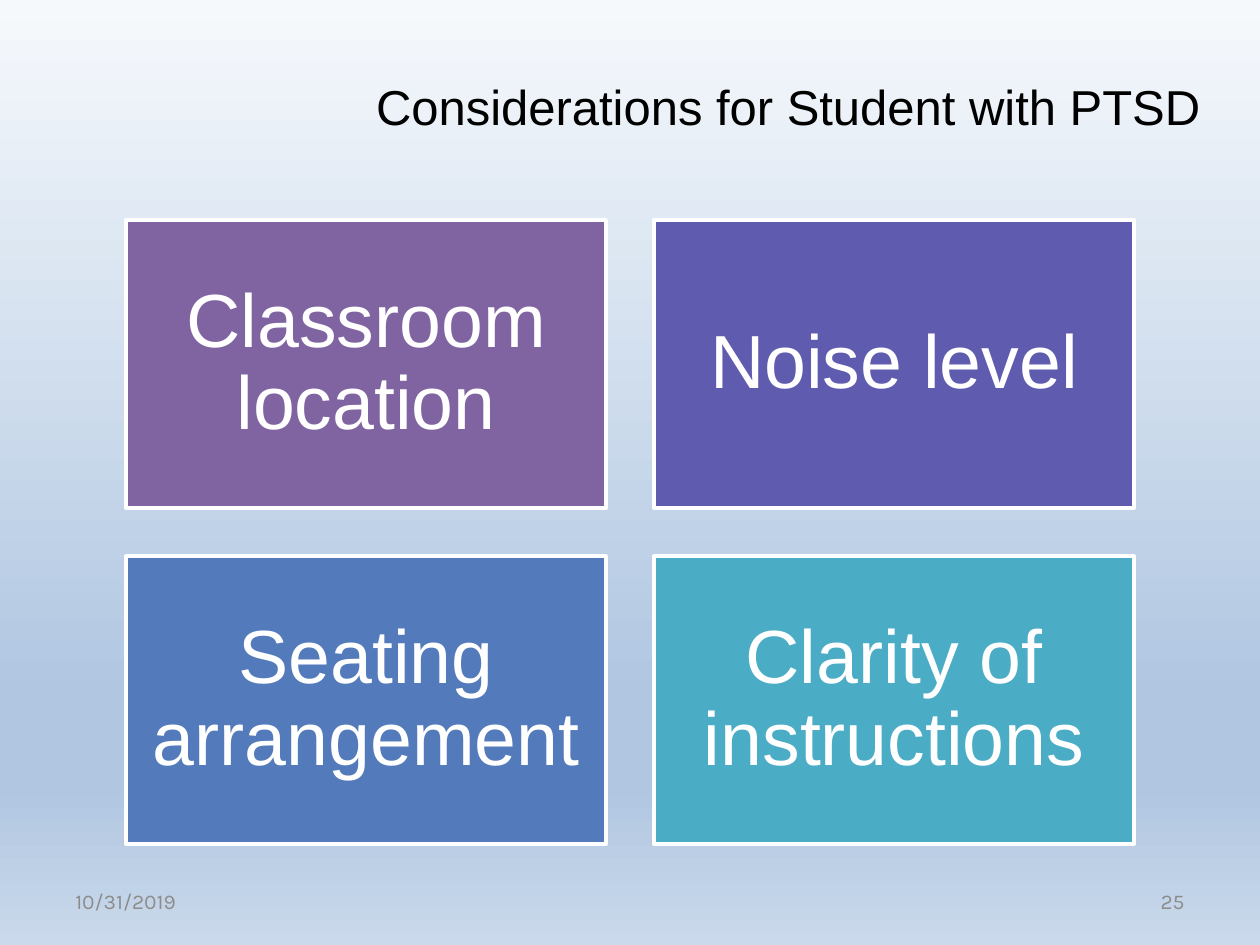
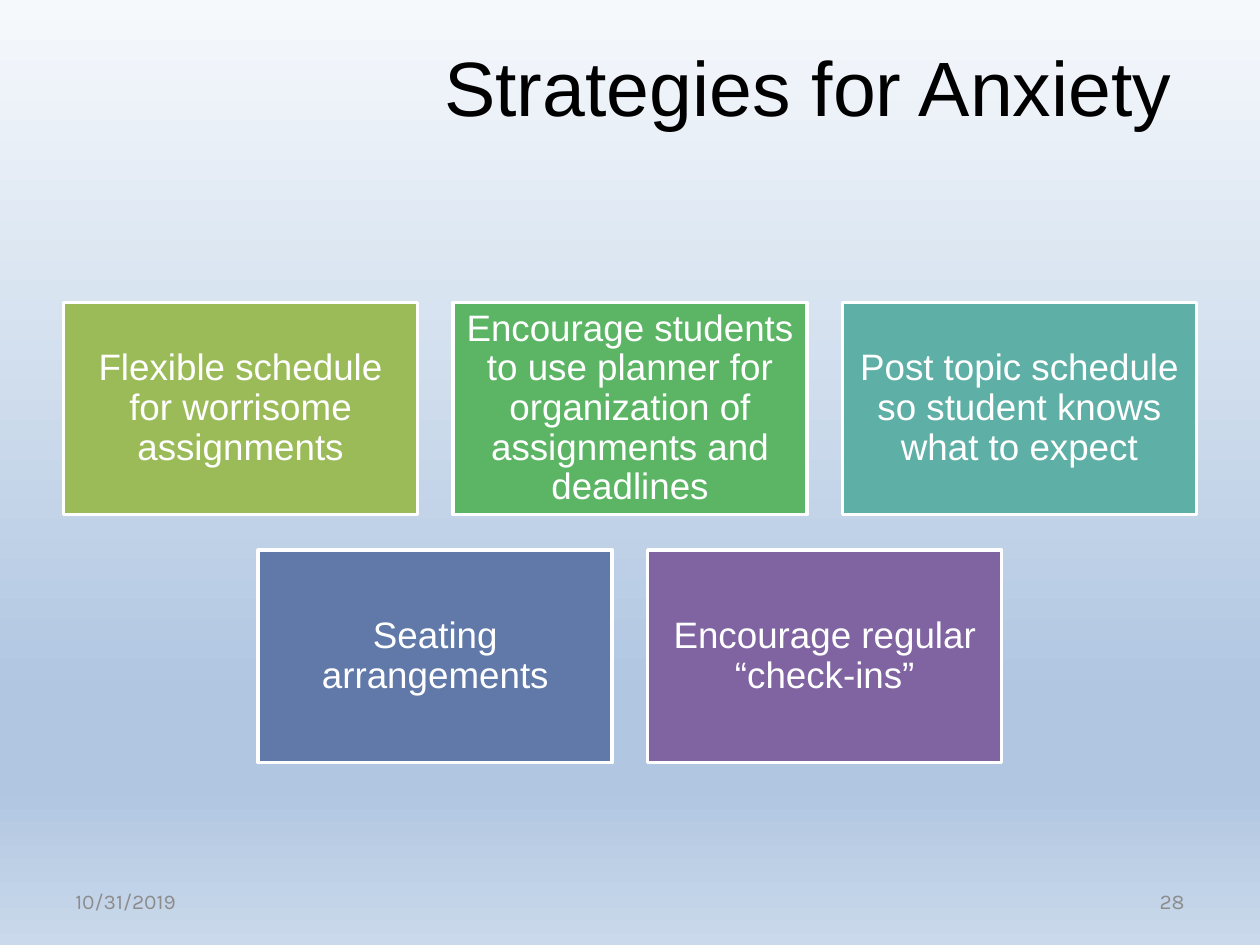
from dataclasses import dataclass

from pptx import Presentation
from pptx.dml.color import RGBColor
from pptx.enum.shapes import MSO_SHAPE
from pptx.enum.text import MSO_ANCHOR, PP_ALIGN
from pptx.oxml import parse_xml
from pptx.oxml.ns import nsdecls
from pptx.util import Inches, Pt

RECTANGLE = MSO_SHAPE.RECTANGLE
MIDDLE = MSO_ANCHOR.MIDDLE
LEFT, CENTER, RIGHT = PP_ALIGN.LEFT, PP_ALIGN.CENTER, PP_ALIGN.RIGHT


@dataclass(frozen=True)
class Theme:
    font: str = "Arial"
    footer_font: str = "Karla"
    title_color: str = "000000"
    tile_text: str = "FFFFFF"
    tile_line: str = "FFFFFF"
    footer_color: str = "8C8C8C"
    footer_size: int = 12
    line_width: int = 2
    # Background stops: percent down the page, colour
    backdrop: tuple = ((0, "F6F9FC"), (74, "B0C6E1"), (83, "B0C6E1"), (100, "CAD9EB"))


theme = Theme()
WIDTH, HEIGHT = Inches(10), Inches(7.5)
DATE = "10/31/2019"
TILE_RATIO = 0.6  # tile height to tile width
GAP_RATIO = 0.1  # gap to tile width

# Title places and tile places are shares of the slide's size
pages = [
    {
        "title": "Considerations for Student with PTSD",
        "title_size": 28, "title_left": 0.267, "title_top": 0.044, "title_width": 0.717,
        "number": "25",
        "tile_width": 0.381, "tiles_top": 0.233, "tile_size": 43, "inset": 0.18,
        "rows": [
            [("Classroom location", "8064A2"), ("Noise level", "5F5BAE")],
            [("Seating arrangement", "537ABA"), ("Clarity of instructions", "4BACC6")],
        ],
    },
    {
        "title": "Strategies for Anxiety",
        "title_size": 44, "title_left": 0.308, "title_top": 0.022, "title_width": 0.667,
        "number": "28",
        "tile_width": 0.281, "tiles_top": 0.32, "tile_size": 21, "inset": 0.09,
        "rows": [
            [
                ("Flexible schedule for worrisome assignments", "9BBB59"),
                ("Encourage students to use planner for organization of "
                 "assignments and deadlines", "5CB565"),
                ("Post topic schedule so student knows what to expect", "5EAFA6"),
            ],
            [("Seating arrangements", "6179A8"), ("Encourage regular “check-ins”", "8064A2")],
        ],
    },
]


def write_text(box, text, size, color, font=theme.font, align=CENTER):
    frame = box.text_frame
    frame.word_wrap = True
    frame.vertical_anchor = MIDDLE
    frame.text = text
    para = frame.paragraphs[0]
    para.alignment = align
    span = para.runs[0]
    span.font.name = font
    span.font.size = Pt(size)
    span.font.color.rgb = RGBColor.from_string(color)
    return frame


def paint_backdrop(page):
    stops = "".join(
        f'<a:gs pos="{percent * 1000}"><a:srgbClr val="{color}"/></a:gs>'
        for percent, color in theme.backdrop
    )
    page.element.cSld.insert(0, parse_xml(
        f'<p:bg {nsdecls("p", "a")}><p:bgPr><a:gradFill rotWithShape="1">'
        f'<a:gsLst>{stops}</a:gsLst><a:lin ang="5400000" scaled="0"/>'
        '</a:gradFill><a:effectLst/></p:bgPr></p:bg>'
    ))


deck = Presentation()
deck.slide_width, deck.slide_height = WIDTH, HEIGHT
blank = deck.slide_layouts[6]

for content in pages:
    page = deck.slides.add_slide(blank)
    paint_backdrop(page)

    # Title
    title = page.shapes.add_textbox(
        int(WIDTH * content["title_left"]), int(HEIGHT * content["title_top"]),
        int(WIDTH * content["title_width"]), int(HEIGHT * 0.137))
    write_text(title, content["title"], content["title_size"], theme.title_color)

    # Tiles: every row is centred across the slide
    tile_width = int(WIDTH * content["tile_width"])
    tile_height = int(tile_width * TILE_RATIO)
    gap = int(tile_width * GAP_RATIO)
    for row, tiles in enumerate(content["rows"]):
        row_width = len(tiles) * (tile_width + gap) - gap
        row_left = (WIDTH - row_width) // 2
        top = int(HEIGHT * content["tiles_top"]) + row * (tile_height + gap)
        for column, (text, color) in enumerate(tiles):
            left = row_left + column * (tile_width + gap)
            tile = page.shapes.add_shape(RECTANGLE, left, top, tile_width, tile_height)
            tile.shadow.inherit = False
            tile.fill.solid()
            tile.fill.fore_color.rgb = RGBColor.from_string(color)
            tile.line.color.rgb = RGBColor.from_string(theme.tile_line)
            tile.line.width = Pt(theme.line_width)
            frame = write_text(tile, text, content["tile_size"], theme.tile_text)
            frame.paragraphs[0].line_spacing = 0.9
            inset = Inches(content["inset"])
            frame.margin_left = frame.margin_right = inset
            frame.margin_top = frame.margin_bottom = inset

    # Footer: date and page number
    for text, left, align in ((DATE, 0.05, LEFT), (content["number"], 0.717, RIGHT)):
        footer = page.shapes.add_textbox(
            int(WIDTH * left), int(HEIGHT * 0.927), int(WIDTH * 0.233), int(HEIGHT * 0.053))
        write_text(footer, text, theme.footer_size, theme.footer_color,
                   theme.footer_font, align)

deck.save("out.pptx")
